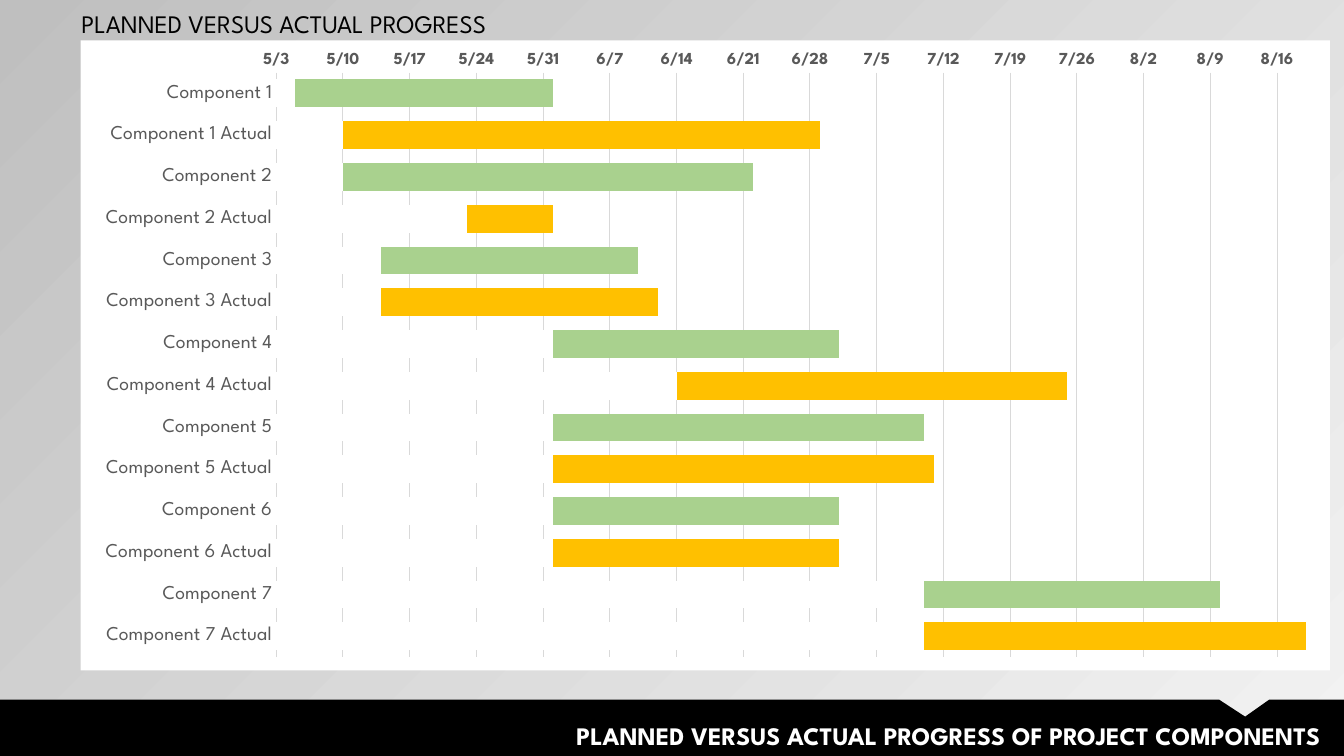
from lxml.etree import SubElement
from pptx import Presentation
from pptx.chart.data import CategoryChartData
from pptx.dml.color import RGBColor
from pptx.enum.chart import XL_CHART_TYPE as ChartType, XL_TICK_MARK as TickMark
from pptx.enum.text import MSO_ANCHOR as Anchor, MSO_AUTO_SIZE as AutoSize, PP_ALIGN as Align
from pptx.oxml import parse_xml
from pptx.oxml.ns import nsdecls, qn
from pptx.util import Pt

PX = 9144  # 100 px to the inch

THEME = {
    "font": "League Spartan",
    "black": RGBColor.from_string("000000"),
    "white": RGBColor.from_string("FFFFFF"),
    "label": RGBColor.from_string("595959"),
    "grid": RGBColor.from_string("D9D9D9"),
    "light": RGBColor.from_string("F2F2F2"),
    "dark": RGBColor.from_string("BFBFBF"),
    "planned": RGBColor.from_string("A9D18E"),
    "actual": RGBColor.from_string("FFC000"),
    "heading": Pt(18),
    "category": Pt(14),
    "date": Pt(12),
}

# Start and end of each bar as date serials: planned, then actual
SCHEDULE = [
    ((45782, 45809), (45787, 45837)),
    ((45787, 45830), (45800, 45809)),
    ((45791, 45818), (45791, 45820)),
    ((45809, 45839), (45822, 45863)),
    ((45809, 45848), (45809, 45849)),
    ((45809, 45839), (45809, 45839)),
    ((45848, 45879), (45848, 45894)),
]


def style_font(font, size, color, bold=False):
    values = {"name": THEME["font"], "size": size, "bold": bold}
    for name, value in values.items():
        setattr(font, name, value)
    font.color.rgb = THEME[color]


def write_heading(box, place, text, color, bold, align):
    for name, value in zip(("left", "top", "width", "height"), place):
        setattr(box, name, value * PX)
    frame = box.text_frame
    frame_format = {"word_wrap": True, "auto_size": AutoSize.SHAPE_TO_FIT_TEXT,
                    "vertical_anchor": Anchor.TOP}
    for name, value in frame_format.items():
        setattr(frame, name, value)
    para = frame.paragraphs[0]
    para.alignment = align
    span = para.add_run()
    span.text = text
    style_font(span.font, THEME["heading"], color, bold)


# Page with a diagonal grey background
deck = Presentation()
deck.slide_width, deck.slide_height = 1333 * PX, 750 * PX
page = deck.slides.add_slide(deck.slide_layouts[5])
backdrop = page.background.fill
backdrop.gradient()
backdrop.gradient_angle = 135
for stop, color, position in zip(backdrop.gradient_stops, ("light", "dark"), (0, 1)):
    stop.color.rgb = THEME[color]
    stop.position = position

# Black band with a notch
outline = page.shapes.build_freeform(0, 694, scale=PX)
outline.add_line_segments([(1209, 694), (1235, 711), (1259, 694),
                           (1333, 694), (1333, 751), (0, 751)])
band = outline.convert_to_shape()
band.shadow.inherit = False
band.fill.solid()
band.fill.fore_color.rgb = THEME["black"]
band.line.fill.background()

# Title on top of the band
title = page.shapes.title
band._element.addnext(title._element)
write_heading(title, (269, 710, 1051, 40),
              "PLANNED VERSUS ACTUAL PROGRESS OF PROJECT COMPONENTS",
              "white", True, Align.RIGHT)

# Schedule chart: white start bars cover the left part of the end bars
bars = [bar for component in SCHEDULE for bar in component]
data = CategoryChartData()
data.categories = [f"Component {number}{suffix}"
                   for number in range(1, len(SCHEDULE) + 1)
                   for suffix in ("", " Actual")]
data.add_series("Series 1", [end for start, end in bars])
data.add_series("Series 2", [start for start, end in bars])
chart = page.shapes.add_chart(ChartType.BAR_CLUSTERED, 80 * PX, 40 * PX,
                              1239 * PX, 625 * PX, data).chart
chart.has_legend = False
chart.has_title = False
style_font(chart.font, THEME["category"], "black")

plot = chart.plots[0]
for name, value in {"gap_width": 50, "overlap": 100, "vary_by_categories": False}.items():
    setattr(plot, name, value)
ends, starts = plot.series
for series, color in ((ends, "actual"), (starts, "white")):
    series.format.fill.solid()
    series.format.fill.fore_color.rgb = THEME[color]
    series.invert_if_negative = False
for index in range(0, len(bars), 2):
    fill = ends.points[index].format.fill
    fill.solid()
    fill.fore_color.rgb = THEME["planned"]

# Axes
components, dates = chart.category_axis, chart.value_axis
axis_formats = (
    (components, {"reverse_order": True, "has_major_gridlines": False}),
    (dates, {"minimum_scale": 45780, "maximum_scale": 45888, "major_unit": 7,
             "has_major_gridlines": True}),
)
for axis, values in axis_formats:
    values |= {"major_tick_mark": TickMark.NONE, "minor_tick_mark": TickMark.NONE}
    for name, value in values.items():
        setattr(axis, name, value)
style_font(components.tick_labels.font, THEME["category"], "label")
style_font(dates.tick_labels.font, THEME["date"], "label", True)
dates.tick_labels.number_format = "m/d;@"
dates.tick_labels.number_format_is_linked = False
dates.format.line.fill.background()
for line in (components.format.line, dates.major_gridlines.format.line):
    line.color.rgb = THEME["grid"]
    line.width = Pt(0.75)

# White chart panel and fixed plot area
chart_xml = chart._chartSpace.find(qn("c:chart"))
chart_xml.addnext(parse_xml(
    f'<c:spPr {nsdecls("c", "a")}><a:solidFill><a:srgbClr val="{THEME["white"]}"/>'
    '</a:solidFill><a:ln><a:noFill/></a:ln></c:spPr>'))
plot_xml = chart_xml.find(qn("c:plotArea"))
for old_layout in plot_xml.findall(qn("c:layout")):
    plot_xml.remove(old_layout)
layout = parse_xml(f'<c:layout {nsdecls("c")}><c:manualLayout/></c:layout>')
settings = {"layoutTarget": "inner", "xMode": "edge", "yMode": "edge",
            "x": 194 / 1239, "y": 32 / 625, "w": 1021 / 1239, "h": 580 / 625}
for name, value in settings.items():
    SubElement(layout[0], qn(f"c:{name}")).set("val", str(value))
plot_xml.insert(0, layout)

# Chart heading
heading = page.shapes.add_textbox(0, 0, PX, PX)
write_heading(heading, (71, 3, 483, 40), "PLANNED VERSUS ACTUAL PROGRESS",
              "black", False, Align.LEFT)

deck.save("out.pptx")
